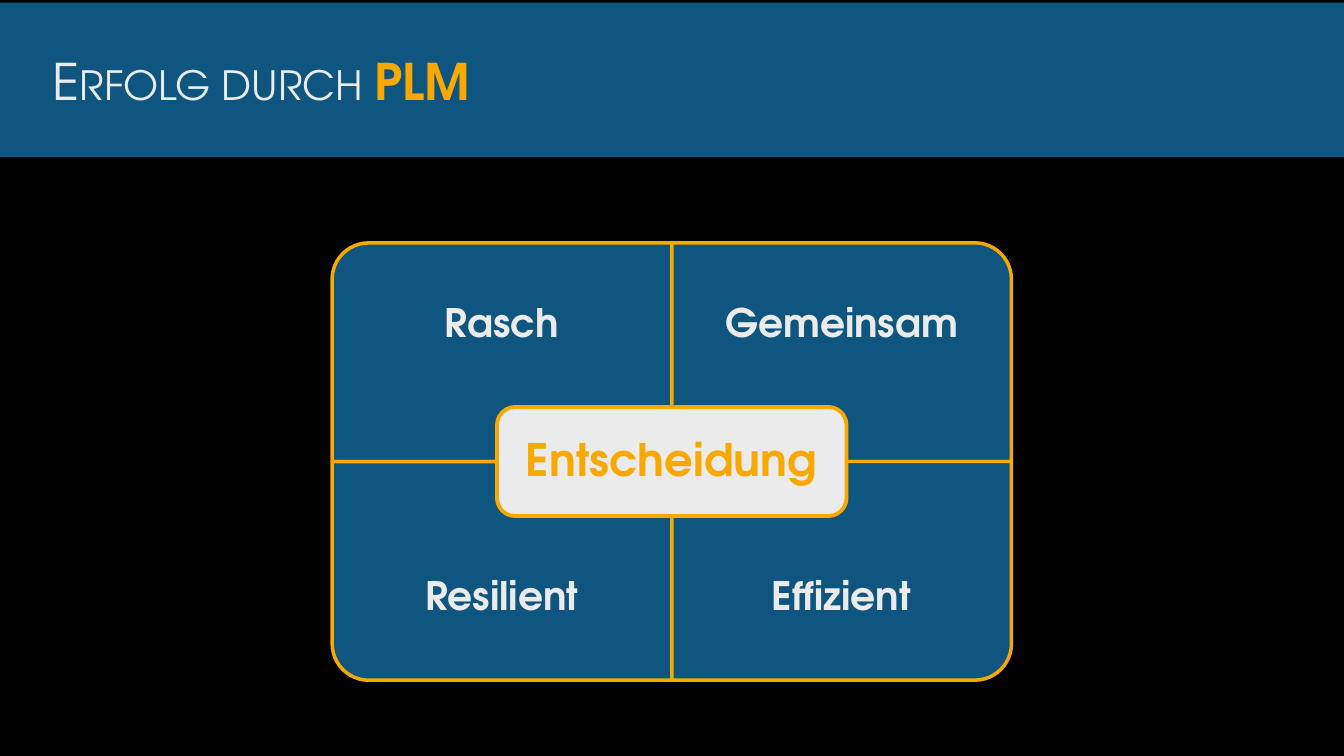
from dataclasses import dataclass

from pptx import Presentation
from pptx.dml.color import RGBColor
from pptx.enum import shapes, text
from pptx.util import Cm, Pt

COLORS = {"black": "000000", "blue": "0E5580", "orange": "F9A800", "light": "EBEBEB"}
FONT = "TeX Gyre Adventor"
SLIDE_W, SLIDE_H = 33.87, 19.05
CENTER_X, CENTER_Y = 16.93, 11.63
QUAD_W, QUAD_H = 8.56, 5.51
LABEL_H = 4.13
HUB_W, HUB_H = 8.81, 2.75


@dataclass(frozen=True)
class Box:
    x: float
    y: float
    w: float
    h: float

    def lengths(self) -> tuple:
        return Cm(self.x), Cm(self.y), Cm(self.w), Cm(self.h)

    def turned(self) -> "Box":
        shift = (self.w - self.h) / 2
        return Box(self.x + shift, self.y - shift, self.h, self.w)


@dataclass(frozen=True)
class Quadrant:
    label: str
    col: int
    row: int
    rotation: int


QUADRANTS = [
    Quadrant("Rasch", 0, 0, 270),
    Quadrant("Gemeinsam", 1, 0, 0),
    Quadrant("Resilient", 0, 1, 180),
    Quadrant("Effizient", 1, 1, 90),
]


def rgb(name: str) -> RGBColor:
    return RGBColor.from_string(COLORS[name])


def add_panel(s, kind, box: Box, fill: str, line_width: float = 0, rotation: int = 0):
    sp = s.shapes.add_shape(kind, *box.lengths())
    sp.shadow.inherit = False
    sp.rotation = rotation
    sp.fill.solid()
    sp.fill.fore_color.rgb = rgb(fill)
    if line_width:
        sp.line.color.rgb = rgb("orange")
        sp.line.width = Pt(line_width)
    else:
        sp.line.fill.background()
    return sp


def set_frame(sp, margin: float, align):
    tf = sp.text_frame
    frame = {
        "word_wrap": True,
        "vertical_anchor": text.MSO_ANCHOR.MIDDLE,
        "margin_left": Cm(margin),
        "margin_right": Cm(margin),
        "margin_top": Cm(margin),
        "margin_bottom": Cm(margin),
    }
    for name, value in frame.items():
        setattr(tf, name, value)
    p = tf.paragraphs[0]
    p.alignment = align
    return p


def add_run(p, words: str, size: int, color: str, bold: bool):
    r = p.add_run()
    r.text = words
    for name, value in {"name": FONT, "size": Pt(size), "bold": bold}.items():
        setattr(r.font, name, value)
    r.font.color.rgb = rgb(color)
    return r


def add_label(sp, words: str, size: int, color: str, margin: float) -> None:
    p = set_frame(sp, margin, text.PP_ALIGN.CENTER)
    p.line_spacing = 0.9
    add_run(p, words, size, color, True)


def add_title(s) -> None:
    sp = add_panel(s, shapes.MSO_SHAPE.RECTANGLE, Box(0, 0.07, SLIDE_W, 3.89), "blue")
    p = set_frame(sp, 0.13, text.PP_ALIGN.LEFT)
    sp.text_frame.margin_left = Cm(1.33)
    r = add_run(p, "Erfolg durch ", 36, "light", False)
    r._r.get_or_add_rPr().set("cap", "small")
    add_run(p, "PLM", 36, "orange", True)


def add_quadrant(s, q: Quadrant) -> None:
    box = Box(CENTER_X + (q.col - 1) * QUAD_W, CENTER_Y + (q.row - 1) * QUAD_H, QUAD_W, QUAD_H)
    outline = box.turned() if q.rotation % 180 else box
    add_panel(s, shapes.MSO_SHAPE.ROUND_1_RECTANGLE, outline, "blue", 2.5, q.rotation)
    label_box = Box(box.x, box.y + q.row * (QUAD_H - LABEL_H), QUAD_W, LABEL_H)
    add_label(s.shapes.add_textbox(*label_box.lengths()), q.label, 28, "light", 0.56)


def add_hub(s) -> None:
    box = Box(CENTER_X - HUB_W / 2, CENTER_Y - HUB_H / 2, HUB_W, HUB_H)
    sp = add_panel(s, shapes.MSO_SHAPE.ROUNDED_RECTANGLE, box, "light", 2.75)
    add_label(sp, "Entscheidung", 32, "orange", 0.33)


def main() -> None:
    prs = Presentation()
    prs.slide_width, prs.slide_height = Cm(SLIDE_W), Cm(SLIDE_H)
    s = prs.slides.add_slide(prs.slide_layouts[6])
    s.background.fill.solid()
    s.background.fill.fore_color.rgb = rgb("black")
    add_title(s)
    for q in QUADRANTS:
        add_quadrant(s, q)
    add_hub(s)
    prs.save("out.pptx")


if __name__ == "__main__":
    main()
